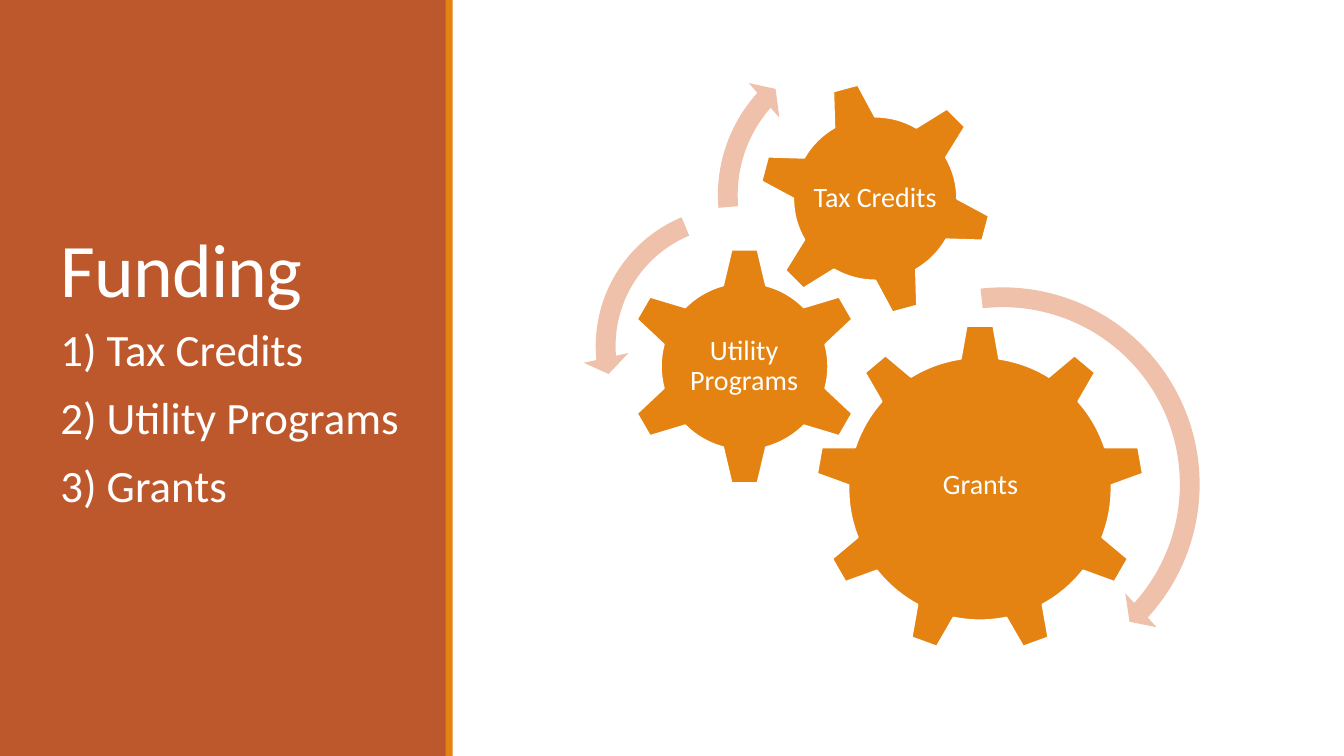
from pptx import Presentation, util as u
from pptx.dml import color
from pptx.enum import shapes, text

PX = 9144  # EMU per px, 100 px to the inch
RUST, ORANGE, PEACH, WHITE = "BD582C", "E48312", "EFC1AB", "FFFFFF"
KIND = shapes.MSO_SHAPE
ANCHOR = text.MSO_ANCHOR


def rgb(value):
    return color.RGBColor.from_string(value)


def apply_format(target, values):
    for name, value in values.items():
        setattr(target, name, value)


def add_figure(page, kind, box, fill, line=None, rotation=0, adjustments=()):
    figure = page.shapes.add_shape(kind, *(n * PX for n in box))
    apply_format(figure, {"rotation": rotation})
    figure.shadow.inherit = False
    figure.fill.solid()
    figure.fill.fore_color.rgb = rgb(fill)
    if line:
        figure.line.color.rgb = rgb(line)
        figure.line.width = u.Pt(1.25)
    else:
        figure.line.fill.background()
    for index, value in enumerate(adjustments):
        figure.adjustments[index] = value


def add_text(page, box, lines, size, frame_format, para_format, tracking=None):
    frame = page.shapes.add_textbox(*(n * PX for n in box)).text_frame
    apply_format(frame, {"word_wrap": True, **frame_format})
    for index, line in enumerate(lines):
        para = frame.add_paragraph() if index else frame.paragraphs[0]
        apply_format(para, para_format)
        span = para.add_run()
        span.text = line
        apply_format(span.font, {"size": u.Pt(size), "name": "Calibri"})
        span.font.color.rgb = rgb(WHITE)
        if tracking:
            span.font._element.set("spc", str(tracking))


def add_gear(page, kind, box, label, label_box, rotation=0):
    add_figure(page, kind, box, ORANGE, WHITE, rotation)
    sides = ("left", "top", "right", "bottom")
    frame_format = {f"margin_{side}": 3 * PX for side in sides}
    frame_format["vertical_anchor"] = ANCHOR.MIDDLE
    add_text(page, label_box, [label], 20, frame_format,
             {"alignment": text.PP_ALIGN.CENTER, "line_spacing": 0.9})


def main():
    deck = Presentation()
    apply_format(deck, {"slide_width": 1333 * PX, "slide_height": 750 * PX})
    page = deck.slides.add_slide(deck.slide_layouts[6])

    # Side panel with its accent stripe
    add_figure(page, KIND.RECTANGLE, (0, 0, 443, 750), RUST)
    add_figure(page, KIND.RECTANGLE, (442, 0, 7, 750), ORANGE)

    # Title and numbered list
    add_text(page, (50, 65, 350, 250), ["Funding"], 54,
             {"vertical_anchor": ANCHOR.BOTTOM}, {"line_spacing": 0.85}, -50)
    add_text(page, (50, 320, 371, 370),
             ["1) Tax Credits", "2) Utility Programs", "3) Grants"], 32,
             {"vertical_anchor": ANCHOR.TOP},
             {"line_spacing": 0.9, "space_before": u.Pt(12), "space_after": u.Pt(2)})

    # Gears with their labels
    add_gear(page, KIND.GEAR_9, (809, 322, 326, 326), "Grants", (875, 398, 195, 168))
    add_gear(page, KIND.GEAR_6, (620, 245, 237, 237), "Utility Programs",
             (679, 305, 118, 117))
    add_gear(page, KIND.GEAR_6, (752, 81, 232, 232), "Tax Credits",
             (803, 132, 130, 130), 345)

    # Arrows for the direction of turning
    arrows = [
        (KIND.CIRCULAR_ARROW, (786, 272, 417, 417), (0.047, 2.99, 25.393, 158.123, 0.055)),
        (KIND.LEFT_CIRCULAR_ARROW, (578, 192, 303, 303), (0.065, 4.3, 104.891, 148.378, 0.075)),
        (KIND.CIRCULAR_ARROW, (699, 30, 327, 327), (0.06, 3.941, 133.138, 105.082, 0.07)),
    ]
    for kind, box, adjustments in arrows:
        add_figure(page, kind, box, PEACH, adjustments=adjustments)

    deck.save("out.pptx")


if __name__ == "__main__":
    main()
